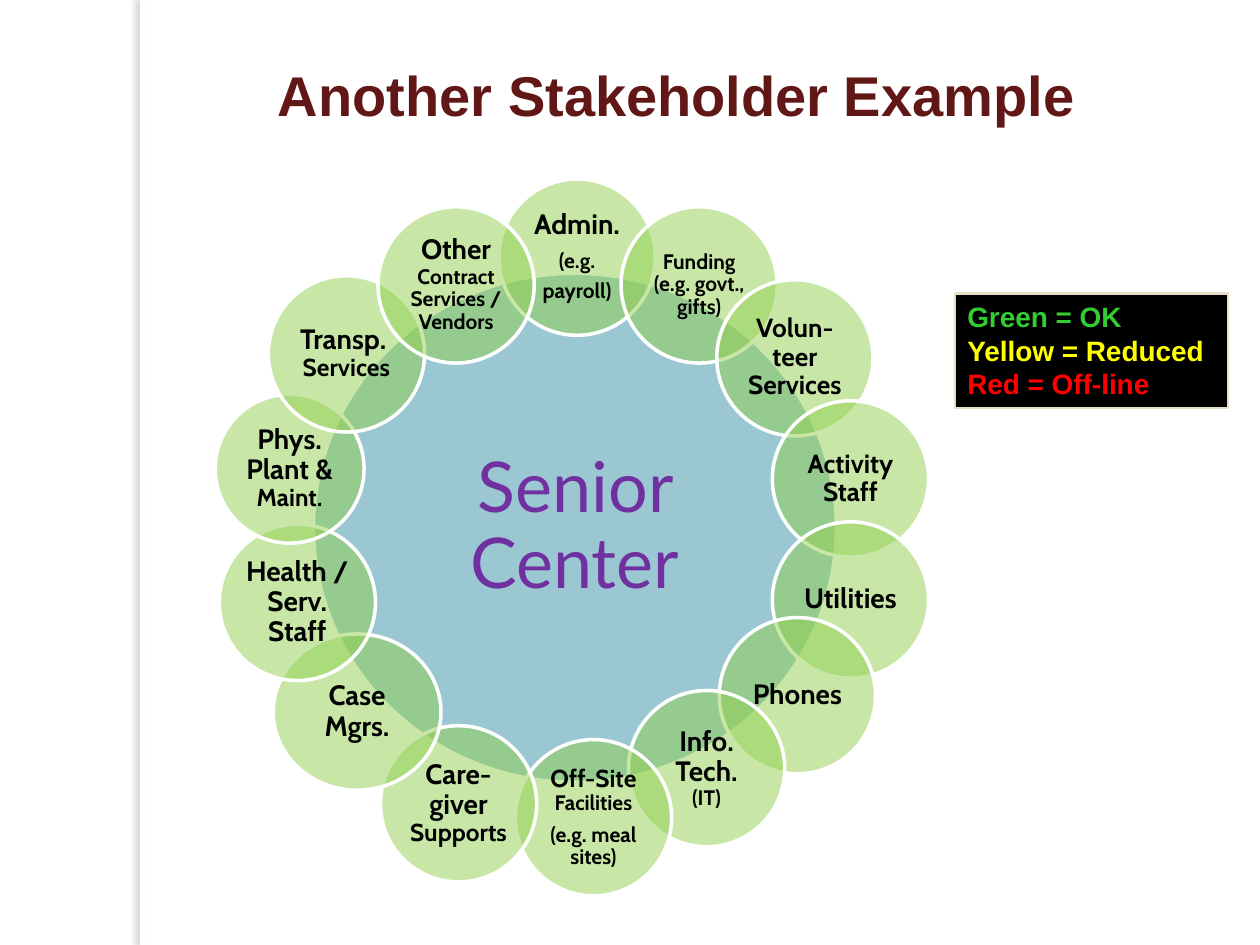
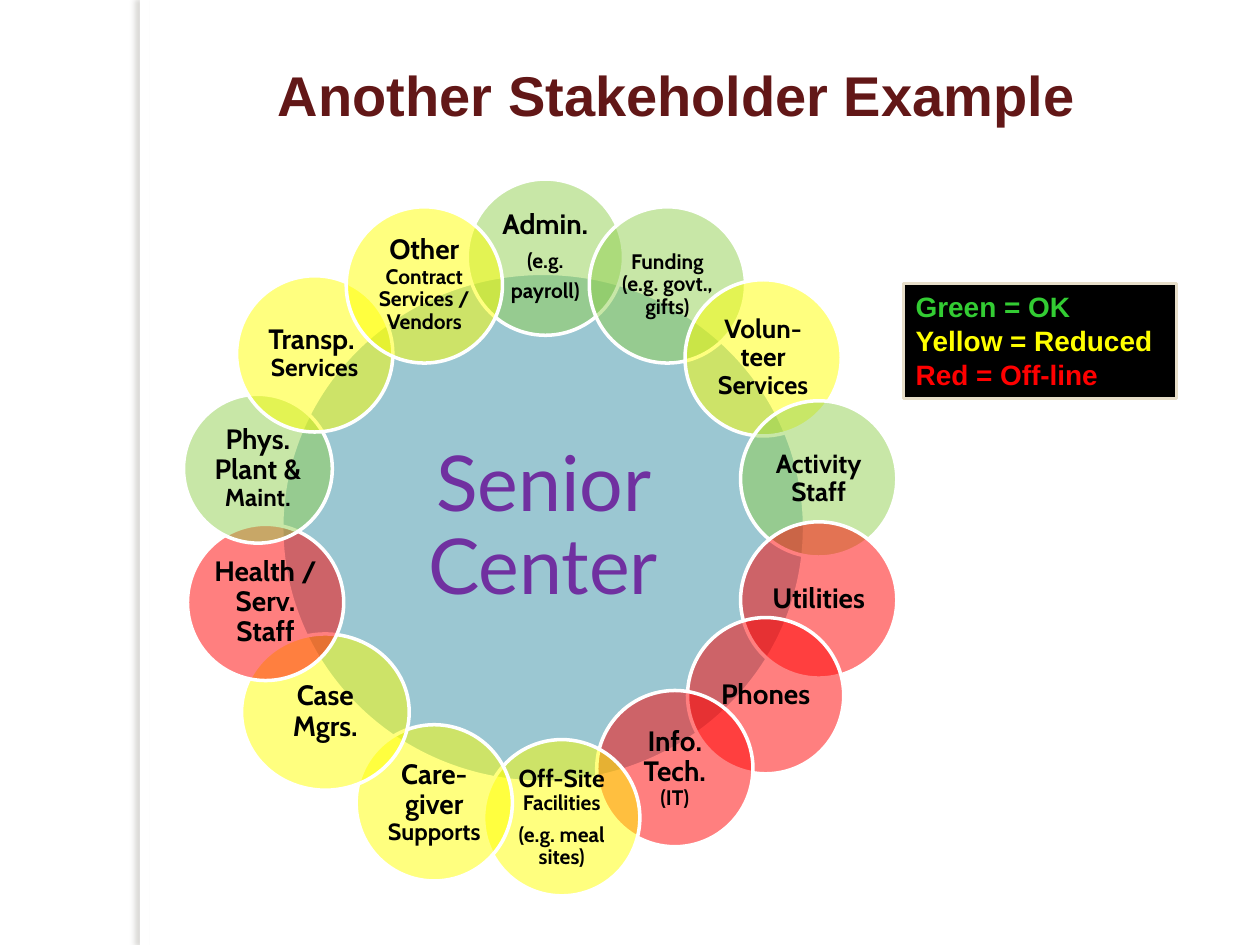
"""Build two slides that show the stakeholders of a senior center and their status."""
from lxml.etree import SubElement
from pptx import Presentation
from pptx.dml.color import RGBColor
from pptx.enum.shapes import MSO_SHAPE
from pptx.enum.text import MSO_ANCHOR, PP_ALIGN
from pptx.oxml.ns import qn
from pptx.util import Cm, Pt

WHITE, BLACK, MAROON, PURPLE = "FFFFFF", "000000", "621717", "7030A0"
TEAL, SHADOW, LEGEND_EDGE = "3891A7", "736F63", "E7DEC9"
STATUS_FILLS = {"G": "92D050", "Y": "FFFF00", "R": "FF0000"}
LEGEND = [("Green = OK", "33CC33"), ("Yellow = Reduced", "FFFF00"), ("Red = Off-line", "FF0000")]
HEADING_FONT, HUB_FONT, LABEL_FONT = "Arial", "Lato", "Cabin"
DIAMETER = 3.15


def color(hex_string):
    """Turn a hex string into a colour."""
    return RGBColor.from_string(hex_string)


def stakeholders(services_size, supports_size, caregiver_place):
    """List each circle as its place (left, top, width, height) and its paragraphs of runs."""
    circle = (DIAMETER, DIAMETER)
    return [
        ((10.06, 3.61, *circle), [[("Admin.", 16)], [("(e.g.", 12)], [("payroll)", 12)]]),
        ((12.52, 4.17, *circle), [[("Funding (e.g. govt., gifts)", 12)]]),
        ((14.45, 5.64, *circle), [[("Volun-\nteer ", 15), ("Services", services_size)]]),
        ((15.57, 8.08, *circle), [[("Activity Staff", 15)]]),
        ((15.57, 10.52, *circle), [[("Utilities", 16)]]),
        ((14.5, 12.45, *circle), [[("Phones", 16)]]),
        ((12.67, 13.92, *circle), [[("Info. Tech.\n", 16), ("(IT)", 12)]]),
        ((10.39, 14.91, *circle),
         [[("Off-Site ", 14), ("Facilities", 12)], [("(e.g. meal sites)", 12)]]),
        ((*caregiver_place, *circle), [[("Care-giver ", 16), ("Supports", supports_size)]]),
        ((5.51, 12.78, 3.38, DIAMETER), [[("Case Mgrs.", 16)]]),
        ((4.42, 10.57, *circle), [[("Health / Serv. Staff", 16)]]),
        ((4.34, 7.95, 3, 3), [[("Phys. Plant & ", 16), ("Maint.", 14)]]),
        ((5.41, 5.56, *circle), [[("Transp. \n", 16), ("Services", 14)]]),
        ((7.62, 4.17, *circle), [[("Other ", 16), ("Contract Services / Vendors", 12)]]),
    ]


def add_run(paragraph, text, size, font_name, hex_string, bold=True):
    """Add text to a paragraph, with a line break at each newline."""
    for index, part in enumerate(text.split("\n")):
        if index:
            paragraph.add_line_break()
        if part:
            run = paragraph.add_run()
            run.text = part
            run.font.size = Pt(size)
            run.font.name = font_name
            run.font.bold = bold
            run.font.color.rgb = color(hex_string)


def paragraph_at(text_frame, index):
    """Return the first paragraph for index 0 and a new one otherwise."""
    return text_frame.add_paragraph() if index else text_frame.paragraphs[0]


def set_insets(text_frame, inset):
    """Give a text frame the same inset on all sides."""
    text_frame.margin_left = text_frame.margin_right = Cm(inset)
    text_frame.margin_top = text_frame.margin_bottom = Cm(inset)


def add_filled_shape(slide, kind, place, fill, line=None, line_width=2):
    """Add a preset shape with a plain fill and an optional outline."""
    shape = slide.shapes.add_shape(kind, *map(Cm, place))
    shape.shadow.inherit = False
    shape.fill.solid()
    shape.fill.fore_color.rgb = color(fill)
    if line:
        shape.line.color.rgb = color(line)
        shape.line.width = Pt(line_width)
    else:
        shape.line.fill.background()
    return shape


def add_circle(slide, place, fill, paragraphs, font_name, hex_string, bold, inset):
    """Add a half-transparent circle with a centred label."""
    shape = add_filled_shape(slide, MSO_SHAPE.OVAL, place, fill, WHITE)
    fill_color = shape._element.spPr.find(qn("a:solidFill")).find(qn("a:srgbClr"))
    SubElement(fill_color, qn("a:alpha"), val="50000")
    text_frame = shape.text_frame
    text_frame.word_wrap = True
    text_frame.vertical_anchor = MSO_ANCHOR.MIDDLE
    set_insets(text_frame, inset)
    for index, runs in enumerate(paragraphs):
        paragraph = paragraph_at(text_frame, index)
        paragraph.alignment = PP_ALIGN.CENTER
        paragraph.line_spacing = 0.9
        paragraph.space_after = Pt(round(0.35 * runs[0][1], 1))
        for text, size in runs:
            add_run(paragraph, text, size, font_name, hex_string, bold)


def add_side_band(slide):
    """Add the white band that casts a soft shadow to its left."""
    band = add_filled_shape(slide, MSO_SHAPE.RECTANGLE, (2.82, 0, 0.2, 19.05), WHITE)
    effects = band._element.spPr.find(qn("a:effectLst"))
    shadow = SubElement(effects, qn("a:outerShdw"), blurRad=str(Pt(3)), dist=str(Pt(3)),
                        dir="10800000", algn="tl", rotWithShape="0")
    shadow_color = SubElement(shadow, qn("a:srgbClr"), val=SHADOW)
    SubElement(shadow_color, qn("a:alpha"), val="25000")


def add_title(slide, text):
    """Add the slide title."""
    box = slide.shapes.add_textbox(Cm(1.48), Cm(1.23), Cm(24.33), Cm(2.54))
    text_frame = box.text_frame
    text_frame.word_wrap = True
    set_insets(text_frame, 0)
    paragraph = text_frame.paragraphs[0]
    paragraph.alignment = PP_ALIGN.CENTER
    add_run(paragraph, text, 32, HEADING_FONT, MAROON)


def add_legend(slide, left, top):
    """Add the black box that explains the status colours."""
    box = add_filled_shape(slide, MSO_SHAPE.RECTANGLE, (left, top, 5.51, 2.31),
                           BLACK, LEGEND_EDGE, 1.5)
    text_frame = box.text_frame
    text_frame.word_wrap = True
    text_frame.vertical_anchor = MSO_ANCHOR.TOP
    for index, (text, hex_string) in enumerate(LEGEND):
        paragraph = paragraph_at(text_frame, index)
        paragraph.alignment = PP_ALIGN.LEFT
        add_run(paragraph, text, 16, HEADING_FONT, hex_string)


def add_stakeholder_slide(presentation, circles, statuses, shift, hub_size, legend_place):
    """Add a slide with the hub, its ring of stakeholders and the legend."""
    slide = presentation.slides.add_slide(presentation.slide_layouts[6])
    add_side_band(slide)
    add_title(slide, "Another Stakeholder Example")
    add_circle(slide, (6.32 + shift, 5.51, 10.54, 10.26), TEAL,
               [[("Senior Center", hub_size)]], HUB_FONT, PURPLE, False, 0.15)
    for ((left, *rest), paragraphs), status in zip(circles, statuses):
        add_circle(slide, (left + shift, *rest), STATUS_FILLS[status],
                   paragraphs, LABEL_FONT, BLACK, True, 0.05)
    add_legend(slide, *legend_place)


def main():
    """Build and save the presentation."""
    presentation = Presentation()
    presentation.slide_width, presentation.slide_height = Cm(25.4), Cm(19.05)
    add_stakeholder_slide(presentation, stakeholders(15, 14, (7.67, 14.63)),
                          "G" * 14, 0, 40, (19.25, 5.92))
    add_stakeholder_slide(presentation, stakeholders(14.5, 13.4, (7.82, 14.61)),
                          "GGYGRRRYYYRGYY", -0.64, 44, (18.21, 5.72))
    presentation.save("out.pptx")


if __name__ == "__main__":
    main()
